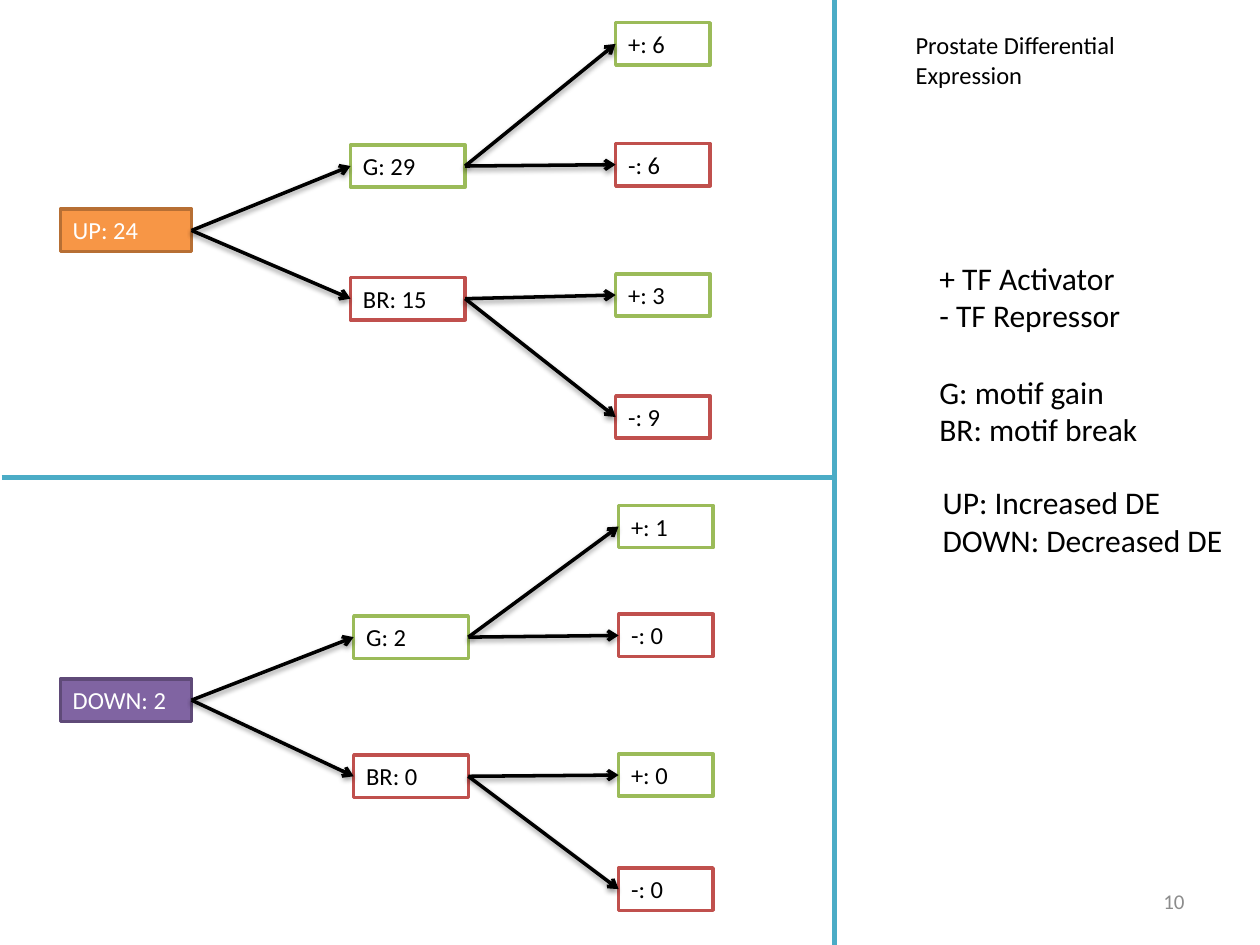
from dataclasses import dataclass

from lxml.etree import SubElement
from pptx import Presentation
from pptx.dml.color import RGBColor
from pptx.enum.shapes import MSO_CONNECTOR, MSO_SHAPE
from pptx.enum.text import MSO_ANCHOR, MSO_AUTO_SIZE, PP_ALIGN
from pptx.oxml.ns import qn
from pptx.util import Pt

BLACK = RGBColor(0x00, 0x00, 0x00)
WHITE = RGBColor(0xFF, 0xFF, 0xFF)
GRAY = RGBColor(0x8C, 0x8C, 0x8C)
ORANGE = RGBColor(0xF7, 0x96, 0x46)
DARK_ORANGE = RGBColor(0xB7, 0x6F, 0x34)
PURPLE = RGBColor(0x80, 0x64, 0xA2)
DARK_PURPLE = RGBColor(0x5F, 0x4A, 0x78)
GREEN = RGBColor(0x9B, 0xBB, 0x59)
RED = RGBColor(0xC0, 0x50, 0x4D)
TEAL = RGBColor(0x4B, 0xAC, 0xC6)

FONT = "Calibri"
BOX_HEIGHT = 24.2
ROOT_LEFT, ROOT_WIDTH = 34.5, 75
MOTIF_WIDTH, FACTOR_WIDTH = 65.5, 54


@dataclass(frozen=True)
class Node:
    text: str
    top: float
    children: tuple = ()


@dataclass(frozen=True)
class Tree:
    root: Node
    fill: RGBColor
    line: RGBColor
    motif_left: float
    factor_left: float


TREES = (
    Tree(
        Node("UP: 24", 119.6, (
            Node("G: 29", 82.8, (Node("+: 6", 13), Node("-: 6", 82))),
            Node("BR: 15", 158.6, (Node("+: 3", 156.5), Node("-: 9", 226.2))),
        )),
        ORANGE, DARK_ORANGE, 200.3, 351.8,
    ),
    Tree(
        Node("DOWN: 2", 388, (
            Node("G: 2", 352, (Node("+: 1", 288.8), Node("-: 0", 351))),
            Node("BR: 0", 431.5, (Node("+: 0", 430.8), Node("-: 0", 496))),
        )),
        PURPLE, DARK_PURPLE, 202.1, 353.5,
    ),
)


def write_text(text_frame, text: str, *, size: float = 14, color: RGBColor = BLACK,
               align=PP_ALIGN.LEFT, anchor=MSO_ANCHOR.TOP, wrap: bool = True,
               gap_before: int = -1) -> None:
    text_frame.text = text
    text_frame.word_wrap = wrap
    text_frame.auto_size = MSO_AUTO_SIZE.NONE
    text_frame.vertical_anchor = anchor
    for index, paragraph in enumerate(text_frame.paragraphs):
        paragraph.alignment = align
        paragraph.space_before = Pt(size * 1.22 if index == gap_before else 0)
        for run in paragraph.runs:
            run.font.name = FONT
            run.font.size = Pt(size)
            run.font.color.rgb = color


def place(shape, left: float, top: float, width: float, height: float) -> None:
    shape.left, shape.top = Pt(left), Pt(top)
    shape.width, shape.height = Pt(width), Pt(height)


def remove_bullets(text_frame) -> None:
    for paragraph in text_frame.paragraphs:
        properties = paragraph._p.get_or_add_pPr()
        properties.set("marL", "0")
        properties.set("indent", "0")
        SubElement(properties, qn("a:buNone"))


def add_box(slide, text: str, left: float, top: float, width: float,
            line: RGBColor, fill: RGBColor = WHITE, color: RGBColor = BLACK):
    box = slide.shapes.add_shape(
        MSO_SHAPE.RECTANGLE, Pt(left), Pt(top), Pt(width), Pt(BOX_HEIGHT))
    box.shadow.inherit = False
    box.fill.solid()
    box.fill.fore_color.rgb = fill
    box.line.color.rgb = line
    box.line.width = Pt(2)
    write_text(box.text_frame, text, color=color)
    return box


def add_line(slide, start: tuple[float, float], end: tuple[float, float],
             color: RGBColor, width: float):
    connector = slide.shapes.add_connector(
        MSO_CONNECTOR.STRAIGHT, Pt(start[0]), Pt(start[1]), Pt(end[0]), Pt(end[1]))
    connector.line.color.rgb = color
    connector.line.width = Pt(width)
    effects = SubElement(connector._element.spPr, qn("a:effectLst"))
    return connector, effects


def add_arrow(slide, source, target) -> None:
    connector, effects = add_line(slide, (0, 0), (0, 0), BLACK, 2)
    connector.begin_connect(source, 3)
    connector.end_connect(target, 1)
    SubElement(connector.line._get_or_add_ln(), qn("a:tailEnd"), type="arrow")
    shadow = SubElement(effects, qn("a:outerShdw"), blurRad=str(Pt(3.1)),
                        dist=str(Pt(1.6)), dir="5400000", rotWithShape="0")
    shadow_color = SubElement(shadow, qn("a:srgbClr"), val=str(BLACK))
    SubElement(shadow_color, qn("a:alpha"), val="38000")


def add_tree(slide, tree: Tree) -> None:
    root = add_box(slide, tree.root.text, ROOT_LEFT, tree.root.top, ROOT_WIDTH,
                   tree.line, tree.fill, WHITE)
    for motif, motif_line in zip(tree.root.children, (GREEN, RED)):
        motif_box = add_box(slide, motif.text, tree.motif_left, motif.top,
                            MOTIF_WIDTH, motif_line)
        add_arrow(slide, root, motif_box)
        for factor, factor_line in zip(motif.children, (GREEN, RED)):
            factor_box = add_box(slide, factor.text, tree.factor_left, factor.top,
                                 FACTOR_WIDTH, factor_line)
            add_arrow(slide, motif_box, factor_box)


def main() -> None:
    presentation = Presentation()
    presentation.slide_width, presentation.slide_height = Pt(720), Pt(540)
    slide = presentation.slides.add_slide(presentation.slide_layouts[3])

    for tree in TREES:
        add_tree(slide, tree)
    add_line(slide, (1, 273), (476.8, 273), TEAL, 3)
    add_line(slide, (476.8, 540), (476.8, 0), TEAL, 3)

    title, factor_legend, direction_legend = slide.placeholders
    place(title, 516, 13.8, 181.5, 41.2)
    write_text(title.text_frame, "Prostate Differential Expression")

    place(factor_legend, 529.6, 144.2, 129, 116.5)
    write_text(factor_legend.text_frame,
               "+ TF Activator\n- TF Repressor\nG: motif gain\nBR: motif break",
               size=18, wrap=False, gap_before=2)
    place(direction_legend, 531.4, 272.3, 176.5, 51)
    write_text(direction_legend.text_frame,
               "UP: Increased DE\nDOWN: Decreased DE", size=18, wrap=False)
    for legend in (factor_legend, direction_legend):
        remove_bullets(legend.text_frame)

    page_number = slide.shapes.add_textbox(Pt(516), Pt(500.5), Pt(168), Pt(28.8))
    write_text(page_number.text_frame, "10", size=12, color=GRAY,
               align=PP_ALIGN.RIGHT, anchor=MSO_ANCHOR.MIDDLE)

    presentation.save("out.pptx")


if __name__ == "__main__":
    main()
